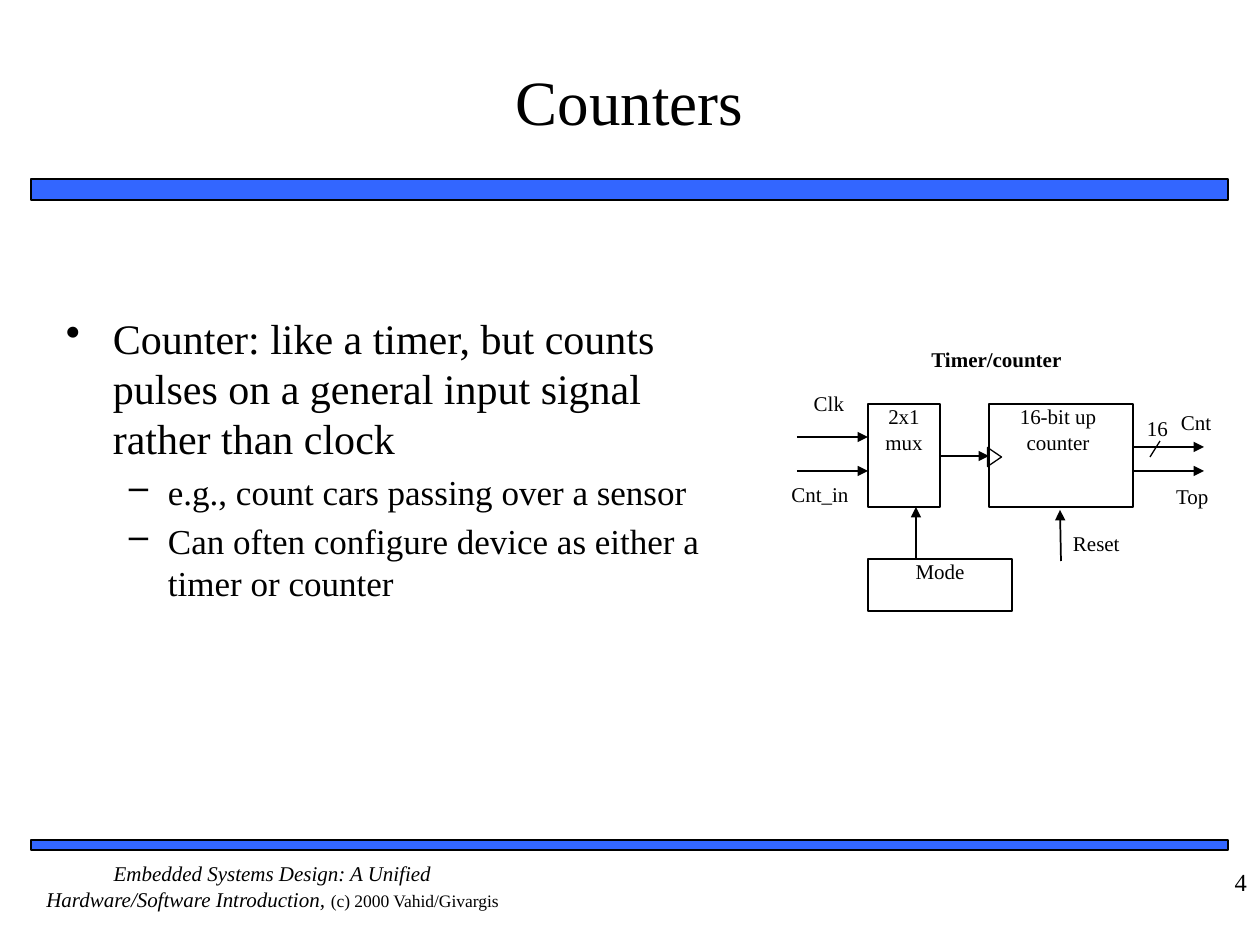
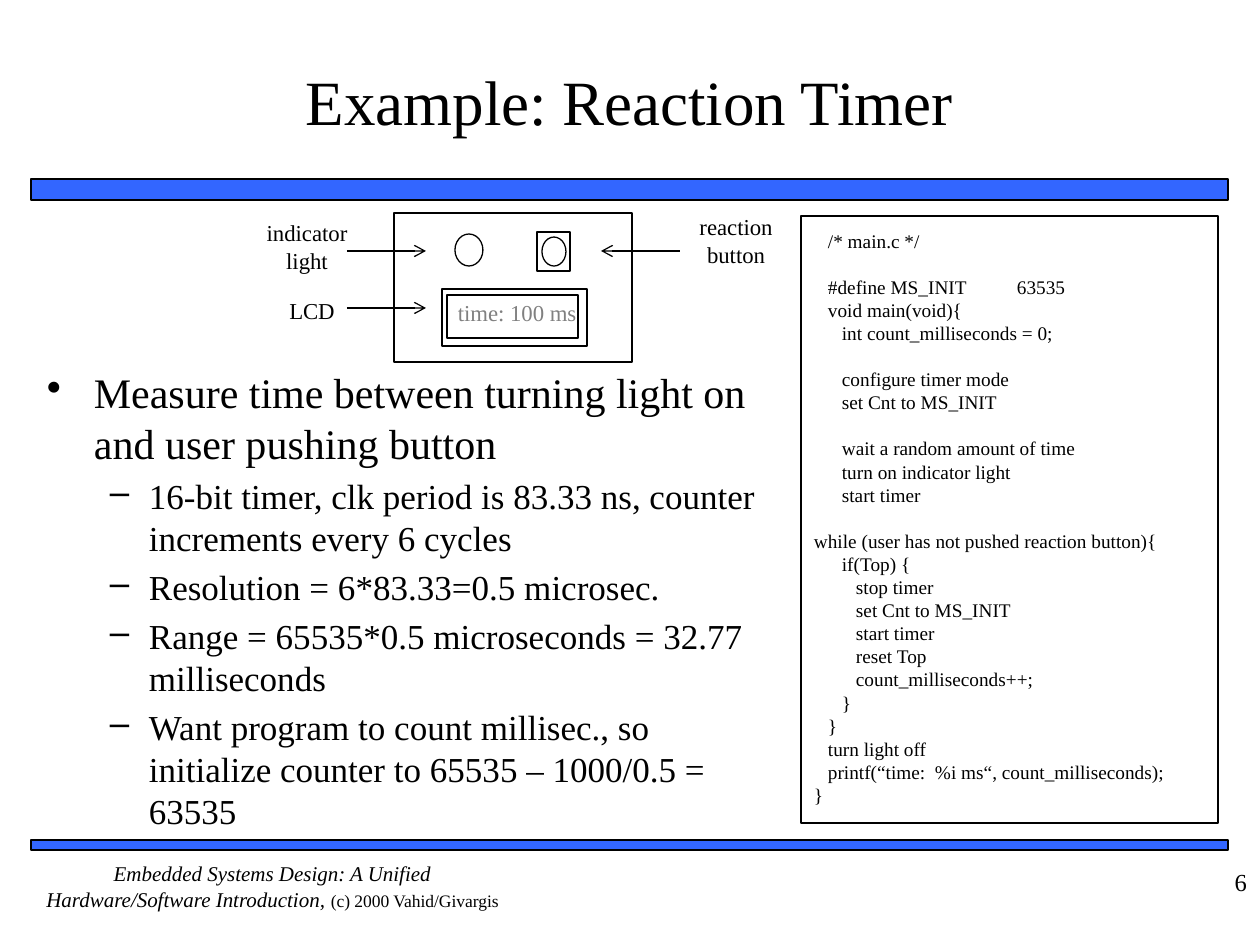
from lxml import etree
from pptx import Presentation
from pptx.dml.color import RGBColor
from pptx.enum.shapes import MSO_CONNECTOR, MSO_SHAPE
from pptx.enum.text import MSO_ANCHOR, PP_ALIGN
from pptx.oxml.ns import qn
from pptx.util import Emu, Pt

EMU_PER_PX = 914400 / 126
FONT = "Times New Roman"
COLORS = {"ink": "000000", "bar": "3366FF", "paper": "FFFFFF", "lcd": "808080"}

LEFT, CENTER, RIGHT = PP_ALIGN.LEFT, PP_ALIGN.CENTER, PP_ALIGN.RIGHT
TOP, MIDDLE = MSO_ANCHOR.TOP, MSO_ANCHOR.MIDDLE
RECT, OVAL = MSO_SHAPE.RECTANGLE, MSO_SHAPE.OVAL
TRIANGLE = MSO_SHAPE.ISOSCELES_TRIANGLE
STRAIGHT = MSO_CONNECTOR.STRAIGHT

TITLE = {"size": Pt(36)}
NUMBER = {"size": Pt(14)}
BOOK = {"size": Pt(12), "italic": True}
CREDIT = {"size": Pt(10), "italic": False}
DIAGRAM = {"size": Pt(12)}
HEADING = {"size": Pt(12), "bold": True}
DEVICE = {"size": Pt(13)}
CODE = {"size": Pt(11)}

# Per outline level: bullet, left margin, hanging indent, text size in points
OUTLINE = [("•", 47, 47, 24), ("–", 102, 39, 20)]
NO_INSETS = (0, 0, 0, 0)
TEXT_INSETS = (13, 6, 13, 6)
CODE_STEP = 14
CODE_LINE = 23
CODE_TAB = 187

# Each code line is (indent level, text); each block is set apart by one line
CODE_BLOCKS = [
    [(1, "/* main.c */")],
    [(1, "#define MS_INIT\t63535"),
     (1, "void main(void){"),
     (2, "int count_milliseconds = 0;")],
    [(2, "configure timer mode"),
     (2, "set Cnt to MS_INIT")],
    [(2, "wait a random amount of time"),
     (2, "turn on indicator light"),
     (2, "start timer")],
    [(0, "while (user has not pushed reaction button){"),
     (2, "if(Top) {"),
     (3, "stop timer"),
     (3, "set Cnt to MS_INIT"),
     (3, "start timer"),
     (3, "reset Top"),
     (3, "count_milliseconds++;"),
     (2, "}"),
     (1, "}"),
     (1, "turn light off"),
     (1, "printf(“time:  %i ms“, count_milliseconds);"),
     (0, "}")],
]


def px(length):
    return Emu(round(length * EMU_PER_PX))


def color(name):
    return RGBColor.from_string(COLORS[name])


def add_span(para, text, style, ink="ink"):
    span = para.add_run()
    span.text = text
    span.font.name = FONT
    span.font.color.rgb = color(ink)
    for name, value in style.items():
        setattr(span.font, name, value)


def set_frame(frame, insets, anchor=TOP):
    sides = ("left", "top", "right", "bottom")
    for side, inset in zip(sides, insets):
        setattr(frame, f"margin_{side}", px(inset))
    frame.word_wrap = True
    frame.vertical_anchor = anchor


def next_paragraph(frame):
    """Return the unused first paragraph, or a new one."""
    first = frame.paragraphs[0]
    return frame.add_paragraph() if first.runs else first


def set_indent(para, margin, hanging=0):
    properties = para._p.get_or_add_pPr()
    properties.set("marL", str(px(margin)))
    properties.set("indent", str(-px(hanging)))
    return properties


def add_label(page, area, text, style, align=CENTER, insets=NO_INSETS,
              anchor=TOP, ink="ink"):
    box = page.shapes.add_textbox(*map(px, area))
    set_frame(box.text_frame, insets, anchor)
    para = box.text_frame.paragraphs[0]
    para.alignment = align
    add_span(para, text, style, ink)
    return box


def add_block(page, area, kind=RECT, fill=None, weight=0.75, text=None,
              insets=NO_INSETS):
    block = page.shapes.add_shape(kind, *map(px, area))
    block.shadow.inherit = False
    if fill:
        block.fill.solid()
        block.fill.fore_color.rgb = color(fill)
    else:
        block.fill.background()
    block.line.color.rgb = color("ink")
    block.line.width = Pt(weight)
    set_frame(block.text_frame, insets)
    if text:
        para = block.text_frame.paragraphs[0]
        para.alignment = CENTER
        add_span(para, text, DIAGRAM)
    return block


def add_line(page, start, end, weight=1, head=None):
    line = page.shapes.add_connector(STRAIGHT, *map(px, start + end))
    line.line.color.rgb = color("ink")
    line.line.width = Pt(weight)
    if head:
        outline = line.line._get_or_add_ln()
        etree.SubElement(outline, qn("a:tailEnd"), type=head)
    etree.SubElement(line._element.spPr, qn("a:effectLst"))


def add_outline(page, area, items):
    """Add a bulleted list from (level, text) items."""
    frame = page.shapes.add_textbox(*map(px, area)).text_frame
    set_frame(frame, TEXT_INSETS)
    for level, text in items:
        bullet, margin, hanging, size = OUTLINE[level]
        para = next_paragraph(frame)
        para.level = level
        para.alignment = LEFT
        para.space_before = Pt(size * 0.2)
        properties = set_indent(para, margin, hanging)
        etree.SubElement(properties, qn("a:buChar"), char=bullet)
        add_span(para, text, {"size": Pt(size)})


def add_code(page, area):
    frame = add_block(page, area, insets=(13, 13, 13, 13)).text_frame
    for block_index, block in enumerate(CODE_BLOCKS):
        for line_index, (level, text) in enumerate(block):
            para = next_paragraph(frame)
            para.alignment = LEFT
            if block_index and not line_index:
                para.space_before = px(CODE_LINE)
            properties = set_indent(para, level * CODE_STEP)
            if "\t" in text:
                tabs = etree.SubElement(properties, qn("a:tabLst"))
                etree.SubElement(tabs, qn("a:tab"), pos=str(px(CODE_TAB)), algn="l")
            add_span(para, text, CODE)


def add_page(deck, title, number):
    """Add a blank slide with the shared title, bars and footer."""
    page = deck.slides.add_slide(deck.slide_layouts[6])
    for top, height in ((179, 21), (840, 10)):
        add_block(page, (31, top, 1197, height), fill="bar", weight=1)
    footer = add_label(
        page, (31, 861, 483, 63),
        "Embedded Systems Design: A Unified Hardware/Software Introduction, ", BOOK)
    add_span(footer.text_frame.paragraphs[0], "(c) 2000 Vahid/Givargis", CREDIT)
    add_label(page, (52, 21, 1155, 158), title, TITLE,
              insets=(0, 6, 0, 6), anchor=MIDDLE)
    add_label(page, (1134, 861, 126, 63), str(number), NUMBER, RIGHT, TEXT_INSETS)
    return page


def draw_timer_counter(page):
    add_block(page, (989, 404, 144, 103), text="16-bit up counter", insets=(0, 0, 6, 0))
    add_block(page, (868, 404, 72, 103), text="2x1 mux")
    add_block(page, (868, 559, 144, 52), text="Mode")
    clock_input = add_block(page, (985, 450, 19, 14), TRIANGLE)
    clock_input.rotation = 90

    for start, end in (
        ((941, 456), (989, 456)),
        ((797, 437), (868, 437)),
        ((797, 471), (868, 471)),
        ((1133, 447), (1204, 447)),
        ((1133, 471), (1204, 471)),
        ((916, 559), (916, 507)),
        ((1061, 561), (1060, 510)),
    ):
        add_line(page, start, end, head="triangle")
    add_line(page, (1160, 441), (1150, 457), 0.75)

    add_label(page, (893, 347, 207, 34), "Timer/counter", HEADING)
    for text, area, align in (
        ("Clk", (790, 391, 78, 35), CENTER),
        ("Cnt_in", (772, 482, 96, 39), CENTER),
        ("16", (1147, 416, 32, 39), LEFT),
        ("Cnt", (1181, 410, 54, 38), LEFT),
        ("Top", (1176, 484, 54, 39), LEFT),
        ("Reset", (1073, 531, 92, 32), LEFT),
    ):
        add_label(page, area, text, DIAGRAM, align)


def draw_reaction_device(page):
    add_block(page, (394, 213, 238, 149))
    add_block(page, (455, 234, 28, 32), OVAL, fill="paper")
    add_block(page, (537, 232, 33, 39))
    add_block(page, (542, 237, 24, 29), OVAL)
    add_block(page, (442, 289, 145, 57))
    add_block(page, (447, 295, 131, 43))
    add_label(page, (452, 299, 130, 35), "time: 100 ms", DEVICE, ink="lcd")

    for text, area in (
        ("indicator light", (262, 219, 90, 59)),
        ("LCD", (286, 297, 52, 32)),
        ("reaction button", (696, 213, 80, 57)),
    ):
        add_label(page, area, text, DEVICE)
    for start, end in (
        ((347, 251), (426, 251)),
        ((347, 308), (426, 308)),
        ((680, 251), (601, 251)),
    ):
        add_line(page, start, end, 0.75, "arrow")


def main():
    deck = Presentation()
    deck.slide_width, deck.slide_height = px(1260), px(945)

    counters = add_page(deck, "Counters", 4)
    add_outline(counters, (53, 306, 704, 486), [
        (0, "Counter: like a timer, but counts pulses on a general input signal "
            "rather than clock"),
        (1, "e.g., count cars passing over a sensor"),
        (1, "Can often configure device as either a timer or counter"),
    ])
    draw_timer_counter(counters)

    reaction = add_page(deck, "Example: Reaction Timer", 6)
    add_outline(reaction, (34, 361, 755, 416), [
        (0, "Measure time between turning light on and user pushing button"),
        (1, "16-bit timer, clk period is 83.33 ns, counter increments every 6 cycles"),
        (1, "Resolution = 6*83.33=0.5 microsec."),
        (1, "Range = 65535*0.5 microseconds = 32.77 milliseconds"),
        (1, "Want program to count millisec., so initialize counter to "
            "65535 – 1000/0.5 = 63535"),
    ])
    draw_reaction_device(reaction)
    add_code(reaction, (801, 216, 417, 607))

    deck.save("out.pptx")


if __name__ == "__main__":
    main()
